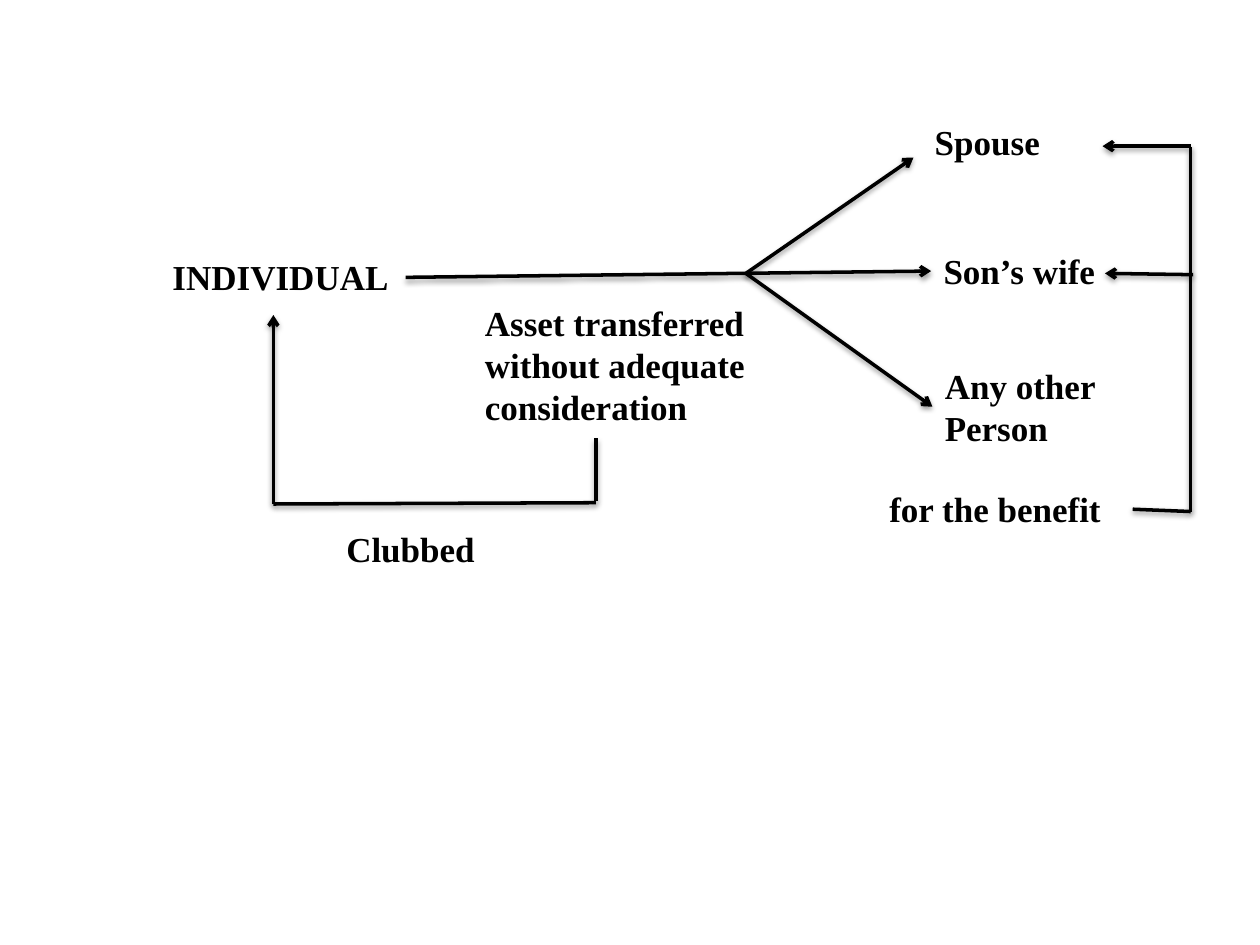
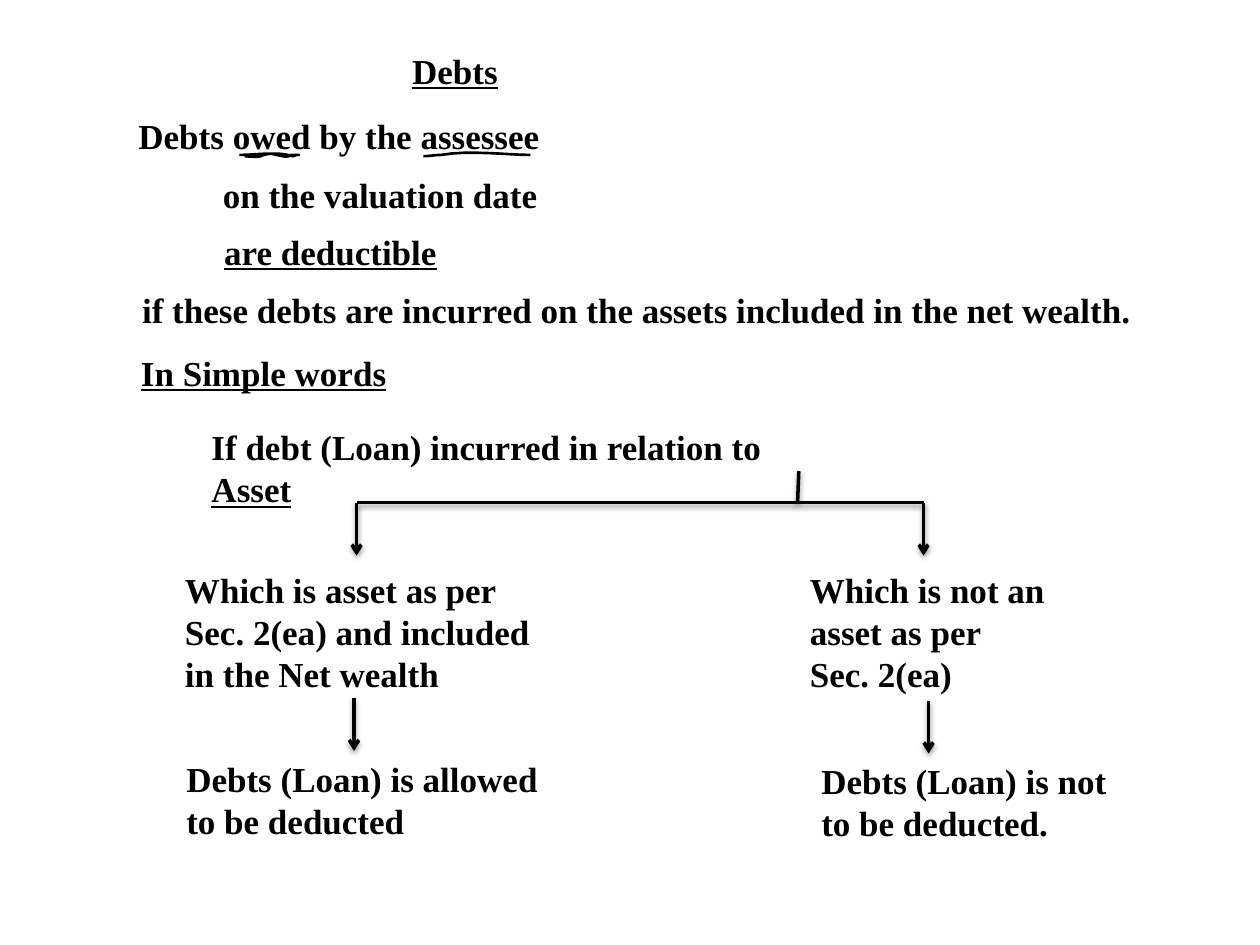
"""Build two slides that chart the clubbing of assets and the deduction of debts."""
from dataclasses import dataclass
from typing import NamedTuple

from lxml import etree
from pptx import Presentation, util as u
from pptx.dml.color import RGBColor
from pptx.enum import shapes, text
from pptx.oxml import ns

WIDE, HIGH = u.Inches(10), u.Inches(7.5)
COLS, ROWS = 100, 75
BLACK = RGBColor(0, 0, 0)
FONT, SIZE = "Times New Roman", u.Pt(20)
LINE, STROKE = u.Pt(2), u.Pt(1.5)
PAD, PITCH = 1.1, 3.33
STEPS = 8
TITLE_ONLY, BLANK = 5, 6


class Run(NamedTuple):
    """A piece of text, underlined or not."""
    words: str
    under: bool = False


@dataclass(frozen=True)
class Label:
    """A text on the grid, with its paragraphs of runs and its count of rows."""
    left: float
    top: float
    wide: float
    paras: tuple[tuple[Run, ...], ...]
    rows: int = 1


@dataclass(frozen=True)
class Link:
    """A line on the grid, with an optional arrowhead and joined labels."""
    start: tuple[float, float]
    end: tuple[float, float]
    head: bool = False
    source: str = ""
    target: str = ""


def plain(*lines: str) -> tuple[tuple[Run, ...], ...]:
    """Turn each line into a paragraph of one plain run."""
    return tuple((Run(line),) for line in lines)


def ruled(words: str) -> tuple[tuple[Run, ...], ...]:
    """Turn words into one underlined paragraph."""
    return ((Run(words, True),),)


CLUB_LABELS = {
    "person": Label(12.7, 19.8, 19.5, plain("INDIVIDUAL")),
    "spouse": Label(73.2, 9.1, 11.7, plain("Spouse")),
    "wife": Label(73.9, 19.3, 16.4, plain("Son’s wife")),
    "other": Label(74, 28.4, 16.4, plain("Any other", "Person"), 2),
    "gain": Label(69.6, 38.2, 20.3, plain("for the benefit")),
    "asset": Label(37.5, 23.4, 23.4,
                   plain("Asset transferred without adequate consideration"), 3),
    "club": Label(26.5, 41.4, 23.4, plain("Clubbed")),
}
FORK = (59.2, 21.7)
CLUB_LINKS = (
    Link((89.8, 40.6), (94.5, 40.6), source="gain"),
    Link((94.5, 40.6), (94.5, 11.7)),
    Link((94.5, 11.6), (87.5, 11.6), True),
    Link((94.7, 21.8), (87.7, 21.7), True),
    Link((47.3, 34.8), (47.3, 39.8)),
    Link((47.3, 39.9), (21.7, 40)),
    Link((21.7, 40), (21.7, 25), True),
    Link(FORK, (72.5, 12.5), True),
    Link(FORK, (74, 32.2), True, target="other"),
    Link((32.2, 22), (73.9, 21.5), True, "person", "wife"),
)

DEBT_TITLE = Label(31.7, 3.4, 15, ruled("Debts"))
DEBT_LABELS = {
    "owed": Label(10, 8.6, 35.8, plain("Debts owed by the assessee")),
    "date": Label(16.7, 13.3, 31.7, plain("on the valuation date")),
    "deduct": Label(16.8, 17.8, 21.5, ruled("are deductible")),
    "wealth": Label(10.3, 22.4, 81.3, plain(
        "if these debts are incurred on the assets included in the net wealth.")),
    "simple": Label(10.2, 27.4, 21.5, ruled("In Simple words")),
    "loan": Label(15.8, 33.3, 52.5, (
        (Run("If debt (Loan) incurred in relation to "), Run("Asset", True)),)),
    "not": Label(63.3, 44.6, 28.3,
                 plain("Which is not an", "asset as per", "Sec. 2(ea)"), 3),
    "is": Label(13.7, 44.6, 31.7, plain(
        "Which is asset as per Sec. 2(ea) and included in the Net wealth"), 3),
    "barred": Label(64.2, 59.8, 26.7,
                    plain("Debts (Loan) is not to be deducted."), 2),
    "allowed": Label(13.8, 59.6, 30.8,
                     plain("Debts (Loan) is allowed to be deducted"), 2),
}
BAR, DROP = 39.9, 4.2
DEBT_LINKS = (
    Link((63.4, 37.4), (63.3, BAR)),
    Link((28.3, BAR), (73.3, BAR)),
    *(Link((col, top), (col, top + DROP), True)
      for col, top in ((73.3, BAR), (28.3, BAR), (73.7, 55.6), (28.1, 55.4))),
)
OWED_STROKE = (
    (19, 12.3), (20.3, 12.3), (22.1, 12), (23.2, 12.4),
    (23.4, 12.4), (23.4, 12.3), (23.6, 12.3),
    (24, 12.3), (23.4, 12.3), (23.4, 12.3),
    (23.1, 12.3), (23, 12.3), (22.9, 12.4),
    (22.6, 12.5), (22.1, 12.3), (21.9, 12.3),
    (21.5, 12.1), (20.9, 12.3), (20.7, 12.4),
    (20.5, 12.5), (19.3, 12.4), (19.5, 12.4),
)
PAYER_STROKE = (
    (33.6, 12.4), (34.1, 12.4), (34.5, 12.3), (35, 12.3),
    (37.2, 11.9), (40.3, 12.3), (42.1, 12.3),
)


def spot(col: float, row: float) -> tuple[int, int]:
    """Give the slide position of a grid point."""
    return round(WIDE * col / COLS), round(HIGH * row / ROWS)


def fill_text(shape, label: Label) -> None:
    """Place a text shape and write its runs."""
    shape.left, shape.top = spot(label.left, label.top)
    shape.width, shape.height = spot(label.wide, PAD + PITCH * label.rows)
    frame = shape.text_frame
    frame.word_wrap = True
    frame.auto_size = text.MSO_AUTO_SIZE.SHAPE_TO_FIT_TEXT
    frame.vertical_anchor = text.MSO_ANCHOR.TOP
    for num, runs in enumerate(label.paras):
        para = frame.add_paragraph() if num else frame.paragraphs[0]
        para.alignment = text.PP_ALIGN.LEFT
        for item in runs:
            run = para.add_run()
            run.text = item.words
            font = run.font
            font.name, font.size, font.bold = FONT, SIZE, True
            font.color.rgb = BLACK
            if item.under:
                font.underline = True


def draw_link(slide, link: Link, boxes: dict) -> None:
    """Draw a shadowed line, joined to its labels where it meets them."""
    wire = slide.shapes.add_connector(
        shapes.MSO_CONNECTOR.STRAIGHT, *spot(*link.start), *spot(*link.end))
    if link.source:
        wire.begin_connect(boxes[link.source], 3)
    if link.target:
        wire.end_connect(boxes[link.target], 1)
    wire.line.color.rgb, wire.line.width = BLACK, LINE
    props = wire._element.spPr
    if link.head:
        etree.SubElement(props.find(ns.qn("a:ln")), ns.qn("a:tailEnd"), type="arrow")
    effects = etree.SubElement(props, ns.qn("a:effectLst"))
    shade = etree.SubElement(
        effects, ns.qn("a:outerShdw"), blurRad=str(u.Pt(3.1)), dist=str(u.Pt(1.6)),
        dir="5400000", rotWithShape="0")
    tint = etree.SubElement(shade, ns.qn("a:srgbClr"), val=str(BLACK))
    etree.SubElement(tint, ns.qn("a:alpha"), val="38000")


def bend(knots: tuple) -> list[tuple[int, int]]:
    """Sample a chain of cubic curves into slide points."""
    points = [spot(*knots[0])]
    for num in range(0, len(knots) - 1, 3):
        curve = knots[num:num + 4]
        for step in range(1, STEPS + 1):
            t = step / STEPS
            parts = ((1 - t) ** 3, 3 * t * (1 - t) ** 2, 3 * t * t * (1 - t), t ** 3)
            points.append(spot(*(sum(p * k[axis] for p, k in zip(parts, curve))
                                 for axis in (0, 1))))
    return points


def draw_stroke(slide, knots: tuple) -> None:
    """Draw a hand-made underline."""
    first, *rest = bend(knots)
    pen = slide.shapes.build_freeform(*first)
    pen.add_line_segments(rest, close=False)
    shape = pen.convert_to_shape()
    shape.shadow.inherit = False
    shape.fill.background()
    shape.line.color.rgb, shape.line.width = BLACK, STROKE


def draw_chart(slide, labels: dict[str, Label], links: tuple[Link, ...]) -> None:
    """Draw the labels of a slide and the lines between them."""
    boxes = {}
    for name, label in labels.items():
        boxes[name] = slide.shapes.add_textbox(0, 0, 0, 0)
        fill_text(boxes[name], label)
    for link in links:
        draw_link(slide, link, boxes)


def main() -> None:
    """Build and save both slides."""
    deck = Presentation()
    deck.slide_width, deck.slide_height = WIDE, HIGH
    club = deck.slides.add_slide(deck.slide_layouts[BLANK])
    draw_chart(club, CLUB_LABELS, CLUB_LINKS)
    debt = deck.slides.add_slide(deck.slide_layouts[TITLE_ONLY])
    fill_text(debt.shapes.title, DEBT_TITLE)
    draw_chart(debt, DEBT_LABELS, DEBT_LINKS)
    for knots in (OWED_STROKE, PAYER_STROKE):
        draw_stroke(debt, knots)
    deck.save("out.pptx")


if __name__ == "__main__":
    main()
